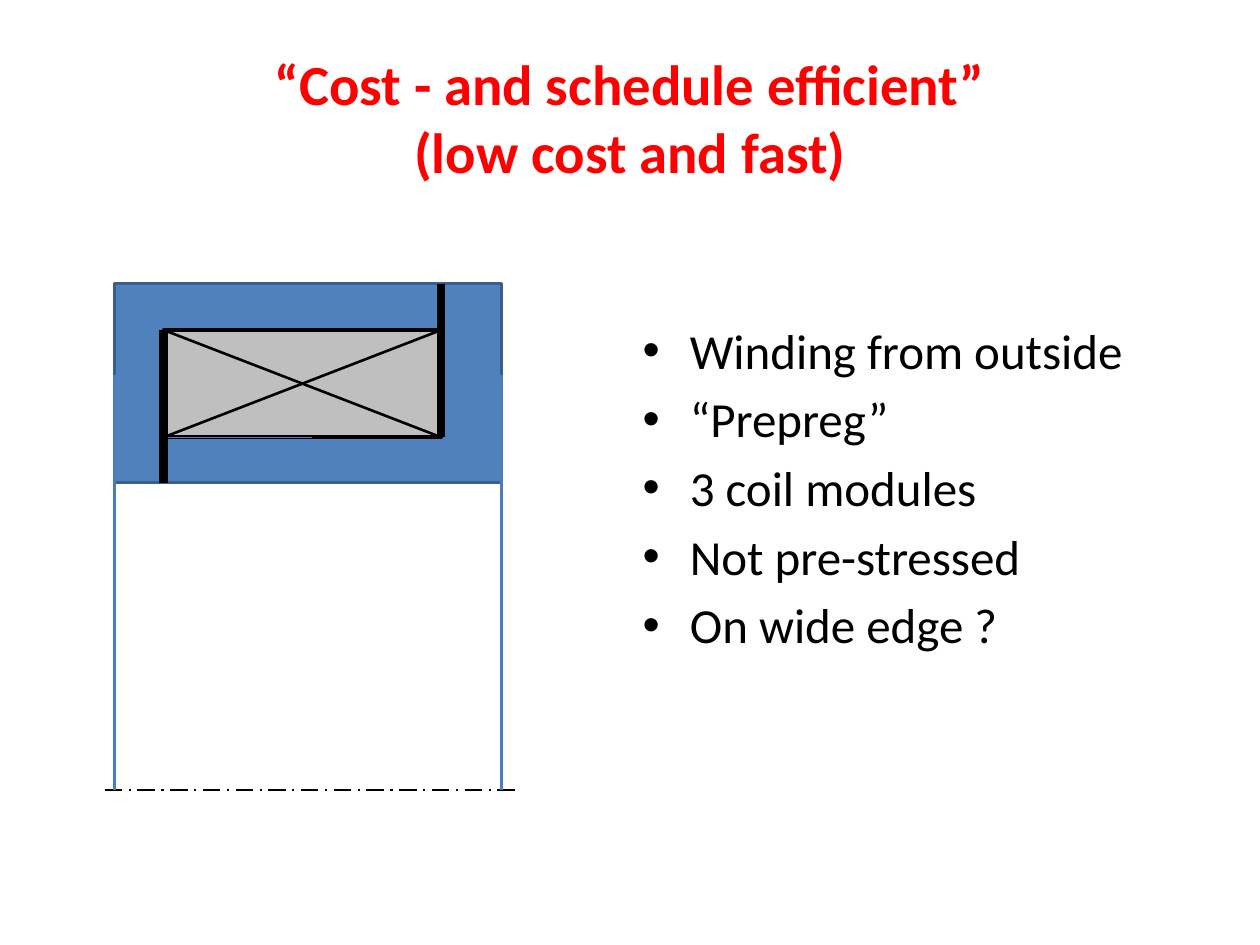
from lxml import etree
from pptx import Presentation
from pptx import util as u
from pptx.dml.color import RGBColor
from pptx.enum import dml, shapes, text
from pptx.oxml.ns import qn

BLACK, BLUE, RED = "000000", "4B7EBC", "FF0000"


def color(hex_string):
    return RGBColor.from_string(hex_string)


def write(paragraph, content, size=28, fill=BLACK, bold=False, align=text.PP_ALIGN.LEFT, before=0):
    paragraph.text = content
    paragraph.alignment = align
    paragraph.space_before = u.Pt(before)
    font = paragraph.font
    font.name, font.size, font.bold = "Calibri", u.Pt(size), bold
    font.color.rgb = color(fill)


class SlideBuilder:
    """Holds the current slide and draws styled elements on it."""

    def __init__(self, slide):
        self.slide = slide

    def fill_placeholder(self, placeholder, box, lines, anchor, before=0, **style):
        placeholder.left, placeholder.top, placeholder.width, placeholder.height = map(u.Inches, box)
        frame = placeholder.text_frame
        frame.auto_size = text.MSO_AUTO_SIZE.NONE
        frame.vertical_anchor = anchor
        for index, line in enumerate(lines):
            paragraph = frame.add_paragraph() if index else frame.paragraphs[0]
            write(paragraph, line, before=before if index else 0, **style)

    def rectangle(self, left, top, right, bottom, fill, line):
        shape = self.slide.shapes.add_shape(
            shapes.MSO_SHAPE.RECTANGLE, u.Inches(left), u.Inches(top),
            u.Inches(right - left), u.Inches(bottom - top))
        shape.shadow.inherit = False
        shape.fill.solid()
        shape.fill.fore_color.rgb = color(fill)
        shape.line.color.rgb = color(line)
        shape.line.width = u.Pt(2)

    def line(self, x1, y1, x2, y2, stroke=BLACK, width=1.5, dash=None):
        connector = self.slide.shapes.add_connector(
            shapes.MSO_CONNECTOR.STRAIGHT, *map(u.Inches, (x1, y1, x2, y2)))
        connector.line.color.rgb = color(stroke)
        connector.line.width = u.Pt(width)
        if dash:
            connector.line.dash_style = dash
        etree.SubElement(connector._element.spPr, qn("a:effectLst"))


def draw_coil_section(builder):
    case_left, case_top, case_right, case_bottom = 0.91, 2.25, 3.98, 3.83
    left, top, right, bottom = 1.3, 2.62, 3.5, 3.47
    axis = 6.27

    builder.rectangle(case_left, case_top, case_right, case_bottom, "4F81BD", "3A5F8C")
    builder.rectangle(left, top, right, bottom, "BFBFBF", BLACK)
    builder.line(left, bottom, 2.48, bottom, BLUE, 0.75)
    builder.line(left, bottom, right, top)
    builder.line(left, top, right, bottom)
    builder.line(0.83, axis, 4.13, axis, width=1.25, dash=dml.MSO_LINE.LONG_DASH_DOT)
    for edge in (case_right, case_left):
        builder.line(edge, 2.98, edge, axis, BLUE)
    builder.line(left, top, left, case_bottom, width=5)
    builder.line(right, case_top, right, bottom, width=5)


def main():
    presentation = Presentation()
    presentation.slide_width, presentation.slide_height = u.Inches(10), u.Inches(7.5)
    slide = presentation.slides.add_slide(presentation.slide_layouts[1])
    title, body = slide.placeholders
    builder = SlideBuilder(slide)
    builder.fill_placeholder(
        title, (0.5, 0.3, 9, 1.25), ["“Cost - and schedule efficient”\v(low cost and fast)"],
        text.MSO_ANCHOR.MIDDLE, size=32.4, fill=RED, bold=True, align=text.PP_ALIGN.CENTER)
    builder.fill_placeholder(
        body, (5, 2.49, 4.5, 2.94),
        ["Winding from outside", "“Prepreg”", "3 coil modules", "Not pre-stressed", "On wide edge ?"],
        text.MSO_ANCHOR.TOP, before=5.6)
    draw_coil_section(builder)
    presentation.save("out.pptx")


if __name__ == "__main__":
    main()
